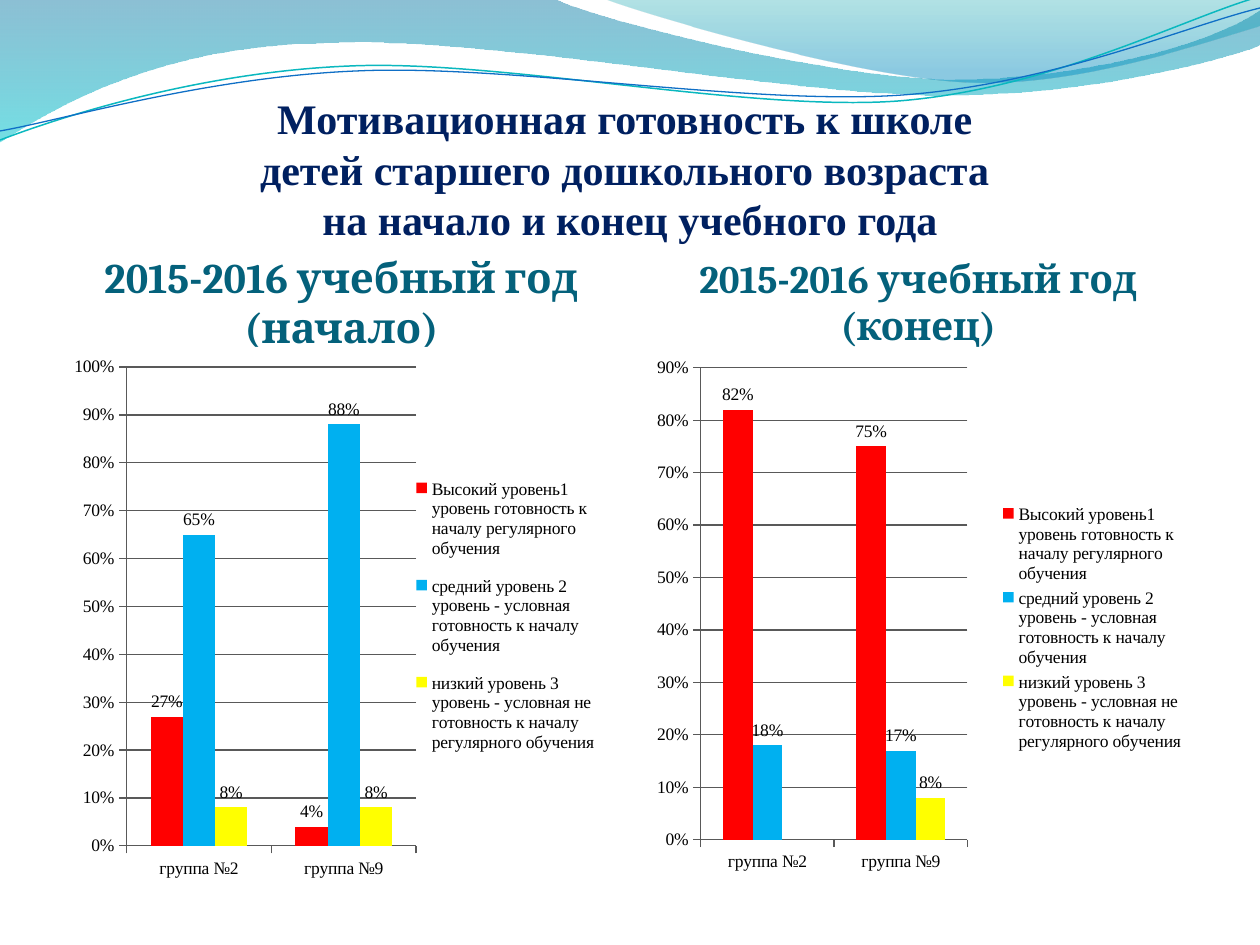
"""Build the slide comparing school readiness at the start and end of the year."""
from lxml import etree
from pptx import Presentation, util as u
from pptx.chart.data import CategoryChartData
from pptx.dml.color import RGBColor
from pptx.enum import chart as charts, text
from pptx.oxml import parse_xml
from pptx.oxml.ns import nsdecls, qn

PX = 914400 // 126
NAVY = RGBColor(0x00, 0x20, 0x60)
TEAL = RGBColor(0x04, 0x61, 0x7B)
BLACK = RGBColor(0, 0, 0)
GRAY = RGBColor(0x59, 0x59, 0x59)
RED = RGBColor(0xFF, 0, 0)
BLUE = RGBColor(0, 0xB0, 0xF0)
YELLOW = RGBColor(0xFF, 0xFF, 0)
CYAN_LINE = RGBColor(0x0A, 0xB8, 0xBF)
BLUE_LINE = RGBColor(0x0F, 0x6F, 0xC6)

TITLE = ("Мотивационная готовность к школе \vдетей старшего дошкольного возраста \v"
         "на начало и конец учебного года")
GROUPS = ["группа №2", "группа №9"]
LEVELS = [
    ("Высокий уровень1 уровень готовность к началу регулярного обучения", RED),
    ("средний уровень 2 уровень - условная готовность к началу обучения", BLUE),
    ("низкий уровень 3 уровень - условная не готовность к началу регулярного обучения", YELLOW),
]
PANELS = [
    dict(heading="2015-2016 учебный год (начало)", size=24, left=63, height=543, top_value=1.0,
         values=[(0.27, 0.04), (0.65, 0.88), (0.08, 0.08)],
         plot=(0.114, 0.037, 0.52, 0.882), legend=(0.634, 0.21, 0.32, 0.57)),
    dict(heading="2015-2016 учебный год (конец)", size=22.2, left=640, height=562, top_value=0.9,
         values=[(0.82, 0.75), (0.18, 0.17), (None, 0.08)],
         plot=(0.109, 0.037, 0.479, 0.84), legend=None),
]
PANEL_WIDTH, HEADING_TOP, HEADING_HEIGHT = 557, 256, 91

# Each segment is one point (straight) or three points (cubic curve).
WAVES = [
    dict(start=(0, 0), segments=[
        [(554, -1)], [(600, 21), (837, 79), (955, 79)], [(1074, 79), (1207, 47), (1260, 11)],
        [(1261, 45)], [(1239, 55), (1096, 96), (940, 95)], [(784, 95), (481, 35), (324, 43)],
        [(163, 45), (58, 105), (-1, 142)], [(0, 0)]],
        stops=[(0, "0074A1", 45), (1, "00C6CF", 55)]),
    dict(start=(604, -1), segments=[
        [(641, 14), (859, 78), (969, 82)], [(1079, 87), (1211, 40), (1260, 26)], [(1260, 0)],
        [(604, -1)]],
        stops=[(0, "00A1A9", 30), (0.8, "008BBF", 45)]),
    dict(start=(0, 140), segments=[
        [(60, 117), (199, 72), (349, 66)], [(498, 59), (747, 112), (898, 101)],
        [(1050, 89), (1182, 19), (1258, -3)]], line=(CYAN_LINE, 0.85)),
    dict(start=(0, 131), segments=[
        [(59, 121), (207, 77), (357, 71)], [(508, 64), (752, 106), (903, 95)],
        [(1053, 84), (1186, 26), (1260, 8)]], line=(BLUE_LINE, 0.75)),
]


def bend(wave, segments):
    """Join each three straight steps of a curved segment into one cubic curve."""
    steps = iter(list(wave._element.iter(qn("a:lnTo"))))
    for segment in segments:
        first, *others = [next(steps) for point in segment]
        if others:
            first.tag = qn("a:cubicBezTo")
            curve = etree.Element(qn("a:cubicBezTo"))
            first.addprevious(curve)
            for step in (first, *others):
                curve.append(step[0])
                step.getparent().remove(step)


def add_wave(page, start, segments, stops=None, line=None):
    """Draw a gradient wave or an open curved line."""
    builder = page.shapes.build_freeform(*start, scale=PX)
    builder.add_line_segments([point for segment in segments for point in segment],
                              close=bool(stops))
    wave = builder.convert_to_shape()
    bend(wave, segments)
    wave.shadow.inherit = False
    if line:
        wave.fill.background()
        wave.line.color.rgb, wave.line.width = line[0], u.Pt(line[1])
        return
    wave.line.fill.background()
    wave.fill.gradient()
    wave.fill.gradient_angle = 270
    for stop, (position, color, opacity) in zip(wave.fill.gradient_stops, stops):
        stop.position = position
        stop.color.rgb = RGBColor.from_string(color)
    tints = wave.fill._xPr.iter(qn("a:srgbClr"))
    for tint, (position, color, opacity) in zip(tints, stops):
        etree.SubElement(tint, qn("a:alpha")).set("val", str(opacity * 1000))


def add_text(page, words, area, *, size, font, color, anchor, inset=0):
    """Add a bold centred text box."""
    box = page.shapes.add_textbox(*(v * PX for v in area))
    frame = box.text_frame
    frame.word_wrap = True
    frame.vertical_anchor = anchor
    frame.margin_left = frame.margin_right = inset * PX
    frame.margin_top = frame.margin_bottom = 0
    para = frame.paragraphs[0]
    para.text = words
    para.alignment = text.PP_ALIGN.CENTER
    for span in para.runs:
        span.font.size, span.font.name, span.font.bold = u.Pt(size), font, True
        span.font.color.rgb = color


def place(parent, spot, inner=False):
    """Give a plot area or legend a fixed place within its chart."""
    layout = parent.find(qn("c:layout"))
    if layout is None:
        layout = parse_xml(f"<c:layout {nsdecls('c')}/>")
        if inner:
            parent.insert(0, layout)
        else:
            parent.find(qn("c:legendPos")).addnext(layout)
    for child in list(layout):
        layout.remove(child)
    manual = etree.SubElement(layout, qn("c:manualLayout"))
    settings = [("layoutTarget", "inner")] if inner else []
    settings += [("xMode", "edge"), ("yMode", "edge"), *zip("xywh", spot)]
    for name, value in settings:
        etree.SubElement(manual, qn(f"c:{name}")).set("val", str(value))


def add_columns(page, left, height, values, top_value, plot, legend):
    """Add a clustered column chart with its legend."""
    data = CategoryChartData(number_format="0%")
    data.categories = GROUPS
    for (name, color), numbers in zip(LEVELS, values):
        data.add_series(name, numbers)
    area = (left, HEADING_TOP + HEADING_HEIGHT, PANEL_WIDTH, height)
    chart = page.shapes.add_chart(charts.XL_CHART_TYPE.COLUMN_CLUSTERED,
                                  *(v * PX for v in area), data).chart
    chart.has_title = False
    chart.font.size, chart.font.name = u.Pt(10), "Times New Roman"
    chart.font.color.rgb = BLACK
    chart._chartSpace.find(qn("c:chart")).addnext(parse_xml(
        f'<c:spPr {nsdecls("c", "a")}><a:solidFill><a:srgbClr val="FFFFFF"/></a:solidFill>'
        '<a:ln><a:noFill/></a:ln></c:spPr>'))
    for axis in (chart.category_axis, chart.value_axis):
        axis.major_tick_mark = charts.XL_TICK_MARK.OUTSIDE
        axis.format.line.color.rgb = GRAY
    scale = chart.value_axis
    scale.minimum_scale, scale.maximum_scale, scale.major_unit = 0, top_value, 0.1
    scale.tick_labels.number_format = "0%"
    scale.tick_labels.number_format_is_linked = False
    scale.major_gridlines.format.line.color.rgb = GRAY
    bars = chart.plots[0]
    bars.gap_width, bars.overlap, bars.vary_by_categories = 150, 0, False
    for series, (name, color) in zip(bars.series, LEVELS):
        series.format.fill.solid()
        series.format.fill.fore_color.rgb = color
        labels = series.data_labels
        labels.show_value = True
        labels.number_format, labels.number_format_is_linked = "0%", False
        labels.position = charts.XL_LABEL_POSITION.OUTSIDE_END
    chart.has_legend = True
    chart.legend.position = charts.XL_LEGEND_POSITION.RIGHT
    chart.legend.include_in_layout = False
    place(chart._chartSpace.find(".//" + qn("c:plotArea")), plot, inner=True)
    if legend:
        place(chart.legend._element, legend)


def main():
    """Assemble and save the deck."""
    deck = Presentation()
    deck.slide_width, deck.slide_height = 1260 * PX, 945 * PX
    page = deck.slides.add_slide(deck.slide_layouts[6])
    for wave in WAVES:
        add_wave(page, **wave)
    add_text(page, TITLE, (63, 97, 1134, 147), size=24, font="Times New Roman", color=NAVY,
             anchor=text.MSO_ANCHOR.BOTTOM)
    for panel in PANELS:
        chart = dict(panel)
        area = (panel["left"], HEADING_TOP, PANEL_WIDTH, HEADING_HEIGHT)
        add_text(page, chart.pop("heading"), area, size=chart.pop("size"), font="Cambria",
                 color=TEAL, anchor=text.MSO_ANCHOR.MIDDLE, inset=6)
        add_columns(page, **chart)
    deck.save("out.pptx")


if __name__ == "__main__":
    main()
